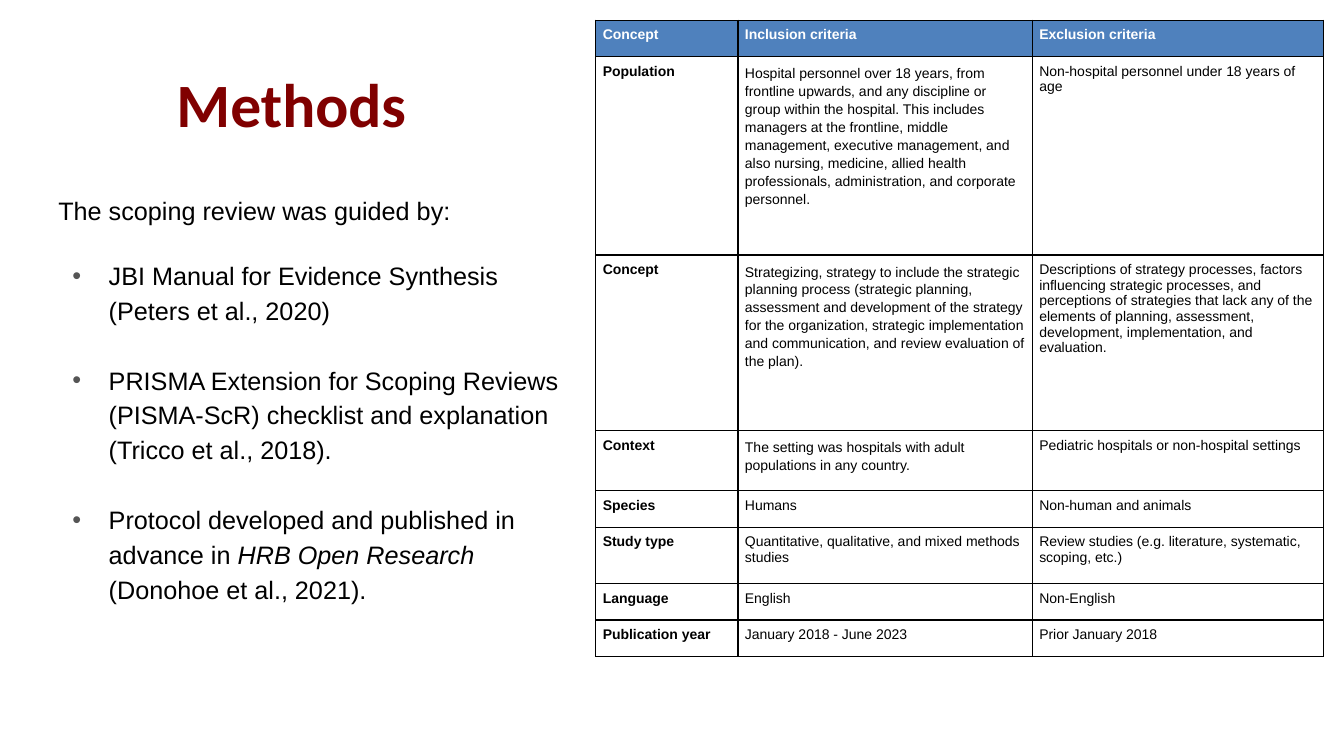
from dataclasses import dataclass

from lxml.etree import SubElement
from pptx import Presentation
from pptx.dml.color import RGBColor
from pptx.enum.text import PP_ALIGN as Align
from pptx.oxml.ns import qn
from pptx.util import Inches, Pt

MAROON = RGBColor(0x80, 0x00, 0x00)
BLACK = RGBColor(0x00, 0x00, 0x00)
WHITE = RGBColor(0xFF, 0xFF, 0xFF)
BLUE = RGBColor(0x4F, 0x81, 0xBD)
GREY = RGBColor(0x55, 0x55, 0x55)

SLIDE_W, SLIDE_H = Inches(13.33), Inches(7.5)
LOOSE = 1.15


def x(percent: float) -> int:
    """Share of the slide's width."""
    return round(SLIDE_W * percent / 100)


def y(percent: float) -> int:
    """Share of the slide's height."""
    return round(SLIDE_H * percent / 100)


@dataclass(frozen=True)
class Box:
    left: float
    top: float
    width: float
    height: float

    def place(self) -> tuple[int, int, int, int]:
        return x(self.left), y(self.top), x(self.width), y(self.height)


@dataclass(frozen=True)
class Guide:
    text: str
    gap: float = 25
    bullet: bool = True
    italic: str = ""
    tail: str = ""


@dataclass(frozen=True)
class Criterion:
    concept: str
    included: str
    excluded: str
    height: float = 4.8
    spacing: float = 1.0


TITLE_BOX = Box(9.23, 8.13, 24.91, 11.2)
GUIDE_BOX = Box(3.6, 24.53, 38.86, 56)
TABLE_BOX = Box(44.33, 2.67, 54.16, 84.27)
COLUMNS = (10.58, 21.9, 21.68)

GUIDES = (
    Guide("The scoping review was guided by:", gap=0, bullet=False),
    Guide("JBI Manual for Evidence Synthesis (Peters et al., 2020)", gap=22),
    Guide("PRISMA Extension for Scoping Reviews (PISMA-ScR) checklist and "
          "explanation (Tricco et al., 2018)."),
    Guide("Protocol developed and published in advance in ",
          italic="HRB Open Research", tail=" (Donohoe et al., 2021)."),
)

CRITERIA = (
    Criterion("Concept", "Inclusion criteria", "Exclusion criteria"),
    Criterion("Population",
              "Hospital personnel over 18 years, from frontline upwards, and any "
              "discipline or group within the hospital. This includes managers at "
              "the frontline, middle management, executive management, and also "
              "nursing, medicine, allied health professionals, administration, "
              "and corporate personnel.",
              "Non-hospital personnel under 18 years of age", 26.27, LOOSE),
    Criterion("Concept",
              "Strategizing, strategy to include the strategic planning process "
              "(strategic planning, assessment and development of the strategy for "
              "the organization, strategic implementation and communication, and "
              "review evaluation of the plan).",
              "Descriptions of strategy processes, factors influencing strategic "
              "processes, and perceptions of strategies that lack any of the "
              "elements of planning, assessment, development, implementation, "
              "and evaluation.", 23.2, LOOSE),
    Criterion("Context",
              "The setting was hospitals with adult populations in any country.",
              "Pediatric hospitals or non-hospital settings", 8, LOOSE),
    Criterion("Species", "Humans", "Non-human and animals"),
    Criterion("Study type", "Quantitative, qualitative, and mixed methods studies",
              "Review studies (e.g. literature, systematic, scoping, etc.)", 7.47),
    Criterion("Language", "English", "Non-English"),
    Criterion("Publication year", "January 2018 - June 2023", "Prior January 2018"),
)


def write(p, text: str, *, size: float = 18, font: str = "Arial",
          color: RGBColor = BLACK, bold: bool = False, italic: bool = False) -> None:
    r = p.add_run()
    r.text = text
    f = r.font
    f.size, f.name, f.bold, f.italic = Pt(size), font, bold, italic
    f.color.rgb = color


def add_box(s, box: Box):
    tf = s.shapes.add_textbox(*box.place()).text_frame
    tf.word_wrap = True
    return tf


def add_bullet(p) -> None:
    pPr = p._p.get_or_add_pPr()
    pPr.set("marL", str(Inches(0.5)))
    pPr.set("indent", str(Inches(-0.36)))
    SubElement(SubElement(pPr, qn("a:buClr")), qn("a:srgbClr"), val=str(GREY))
    SubElement(pPr, qn("a:buFont"), typeface="Arial")
    SubElement(pPr, qn("a:buChar"), char="•")


def add_guides(s) -> None:
    tf = add_box(s, GUIDE_BOX)
    for i, guide in enumerate(GUIDES):
        p = tf.add_paragraph() if i else tf.paragraphs[0]
        if guide.bullet:
            add_bullet(p)
        p.line_spacing = LOOSE
        p.space_before = Pt(guide.gap)
        write(p, guide.text)
        if guide.italic:
            write(p, guide.italic, italic=True)
            write(p, guide.tail)


def add_borders(cell) -> None:
    tcPr = cell._tc.get_or_add_tcPr()
    for side in ("lnL", "lnR", "lnT", "lnB"):
        ln = SubElement(tcPr, qn(f"a:{side}"), w=str(Pt(1)))
        SubElement(SubElement(ln, qn("a:solidFill")), qn("a:srgbClr"), val=str(BLACK))


def fill_cell(cell, text: str, *, header: bool, bold: bool, spacing: float) -> None:
    cell.margin_left = cell.margin_right = Pt(5)
    cell.margin_top = cell.margin_bottom = Pt(5)
    add_borders(cell)
    if header:
        cell.fill.solid()
        cell.fill.fore_color.rgb = BLUE
    else:
        cell.fill.background()
    p = cell.text_frame.paragraphs[0]
    p.line_spacing = spacing
    write(p, text, size=10, bold=bold, color=WHITE if header else BLACK)


def add_criteria(s) -> None:
    table = s.shapes.add_table(len(CRITERIA), len(COLUMNS), *TABLE_BOX.place()).table
    table.horz_banding = False
    for column, width in zip(table.columns, COLUMNS):
        column.width = x(width)
    for i, (row, c) in enumerate(zip(table.rows, CRITERIA)):
        row.height = y(c.height)
        for j, text in enumerate((c.concept, c.included, c.excluded)):
            fill_cell(row.cells[j], text, header=i == 0, bold=i == 0 or j == 0,
                      spacing=c.spacing if j == 1 else 1.0)


def main() -> None:
    prs = Presentation()
    prs.slide_width, prs.slide_height = SLIDE_W, SLIDE_H
    s = prs.slides.add_slide(prs.slide_layouts[6])

    # Title
    p = add_box(s, TITLE_BOX).paragraphs[0]
    p.alignment = Align.CENTER
    write(p, "Methods", size=44, font="Calibri", color=MAROON, bold=True)

    # Guidance on the left, criteria table on the right
    add_guides(s)
    add_criteria(s)
    prs.save("out.pptx")


if __name__ == "__main__":
    main()
